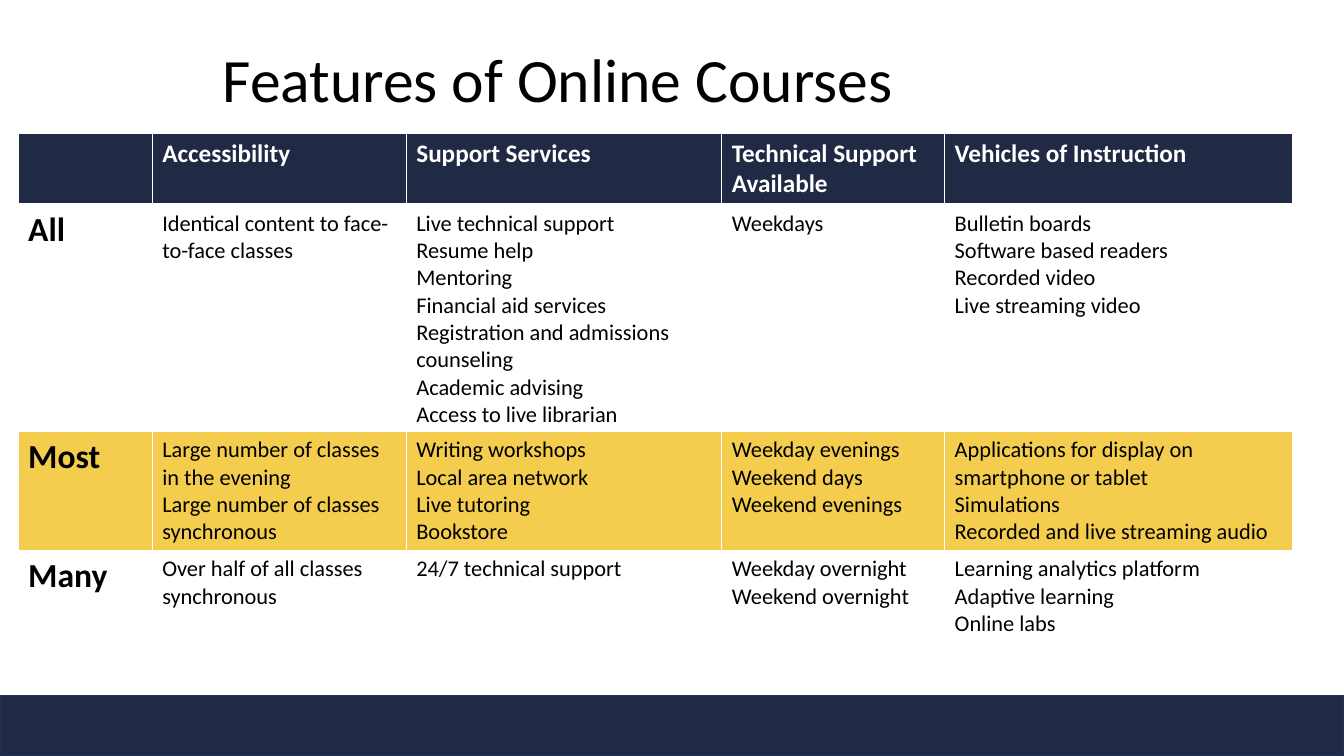
from dataclasses import dataclass
from typing import Optional

from lxml.etree import SubElement
from pptx import Presentation
from pptx.dml.color import RGBColor
from pptx.enum.shapes import MSO_SHAPE
from pptx.enum.text import MSO_ANCHOR
from pptx.oxml.ns import qn
from pptx.slide import Slide
from pptx.table import Table, _Cell
from pptx.text.text import Font
from pptx.util import Inches, Pt

COLORS = {
    "navy": "202A44",
    "navy_edge": "1E3256",
    "gold": "F4CD4E",
    "white": "FFFFFF",
    "black": "000000",
}
FONT = "Calibri"
COLUMN_WIDTHS = [1.33, 2.52, 3.13, 2.21, 3.45]


@dataclass
class FeatureRow:
    height: float
    fill: Optional[str]
    cells: list[str]
    is_header: bool = False


FEATURES = [
    FeatureRow(0.71, "navy", [
        "",
        "Accessibility",
        "Support Services",
        "Technical Support Available",
        "Vehicles of Instruction",
    ], is_header=True),
    FeatureRow(2.25, None, [
        "All",
        "Identical content to face-to-face classes",
        "Live technical support\nResume help\nMentoring\nFinancial aid services\n"
        "Registration and admissions counseling\nAcademic advising\nAccess to live librarian",
        "Weekdays",
        "Bulletin boards\nSoftware based readers\nRecorded video\nLive streaming video",
    ]),
    FeatureRow(1.18, "gold", [
        "Most",
        "Large number of classes in the evening\nLarge number of classes synchronous",
        "Writing workshops\nLocal area network\nLive tutoring\nBookstore",
        "Weekday evenings\nWeekend days\nWeekend evenings",
        "Applications for display on smartphone or tablet\nSimulations\n"
        "Recorded and live streaming audio",
    ]),
    FeatureRow(1.18, None, [
        "Many",
        "Over half of all classes synchronous",
        "24/7 technical support",
        "Weekday overnight\nWeekend overnight",
        "Learning analytics platform\nAdaptive learning\nOnline labs",
    ]),
]


def rgb(name: str) -> RGBColor:
    return RGBColor.from_string(COLORS[name])


def style_font(font: Font, size: int, color: str, bold: bool = False) -> None:
    font.name = FONT
    font.size = Pt(size)
    font.bold = bold
    font.color.rgb = rgb(color)


def add_footer_band(slide: Slide) -> None:
    band = slide.shapes.add_shape(
        MSO_SHAPE.RECTANGLE, Inches(0), Inches(6.9), Inches(13.33), Inches(0.6))
    band.shadow.inherit = False
    band.fill.solid()
    band.fill.fore_color.rgb = rgb("navy")
    band.line.color.rgb = rgb("navy_edge")
    band.line.width = Pt(1)


def add_title(slide: Slide, title: str) -> None:
    frame = slide.shapes.add_textbox(
        Inches(2.11), Inches(0.4), Inches(10.31), Inches(0.83)).text_frame
    frame.word_wrap = True
    frame.vertical_anchor = MSO_ANCHOR.MIDDLE
    frame.text = title
    heading = frame.paragraphs[0]
    heading.line_spacing = 0.9
    style_font(heading.runs[0].font, 44, "black")


def add_borders(cell: _Cell, header_rule_side: Optional[str]) -> None:
    properties = cell._tc.get_or_add_tcPr()
    for side in ("L", "R", "T", "B"):
        width = Pt(3 if side == header_rule_side else 1)
        border = SubElement(properties, qn(f"a:ln{side}"), w=str(width))
        fill = SubElement(border, qn("a:solidFill"))
        SubElement(fill, qn("a:srgbClr"), val=COLORS["white"])


def fill_row(table: Table, index: int, feature: FeatureRow) -> None:
    table.rows[index].height = Inches(feature.height)
    rule_side = {0: "B", 1: "T"}.get(index)
    for column, content in enumerate(feature.cells):
        cell = table.cell(index, column)
        add_borders(cell, rule_side)
        if feature.fill:
            cell.fill.solid()
            cell.fill.fore_color.rgb = rgb(feature.fill)
        else:
            cell.fill.background()
        cell.text_frame.text = content
        is_label = column == 0
        size = 18 if feature.is_header else 24 if is_label else 16
        color = "white" if feature.is_header else "black"
        for paragraph in cell.text_frame.paragraphs:
            style_font(paragraph.font, size, color)
            for run in paragraph.runs:
                style_font(run.font, size, color, feature.is_header or is_label)


def add_feature_table(slide: Slide) -> None:
    table = slide.shapes.add_table(
        len(FEATURES), len(COLUMN_WIDTHS), Inches(0.18), Inches(1.32),
        Inches(sum(COLUMN_WIDTHS)), Inches(sum(row.height for row in FEATURES))).table
    table.horz_banding = False
    for column, width in zip(table.columns, COLUMN_WIDTHS):
        column.width = Inches(width)
    for index, feature in enumerate(FEATURES):
        fill_row(table, index, feature)


def main() -> None:
    presentation = Presentation()
    presentation.slide_width = Inches(13.33)
    presentation.slide_height = Inches(7.5)
    slide = presentation.slides.add_slide(presentation.slide_layouts[6])
    add_footer_band(slide)
    add_title(slide, "Features of Online Courses")
    add_feature_table(slide)
    presentation.save("out.pptx")


if __name__ == "__main__":
    main()
